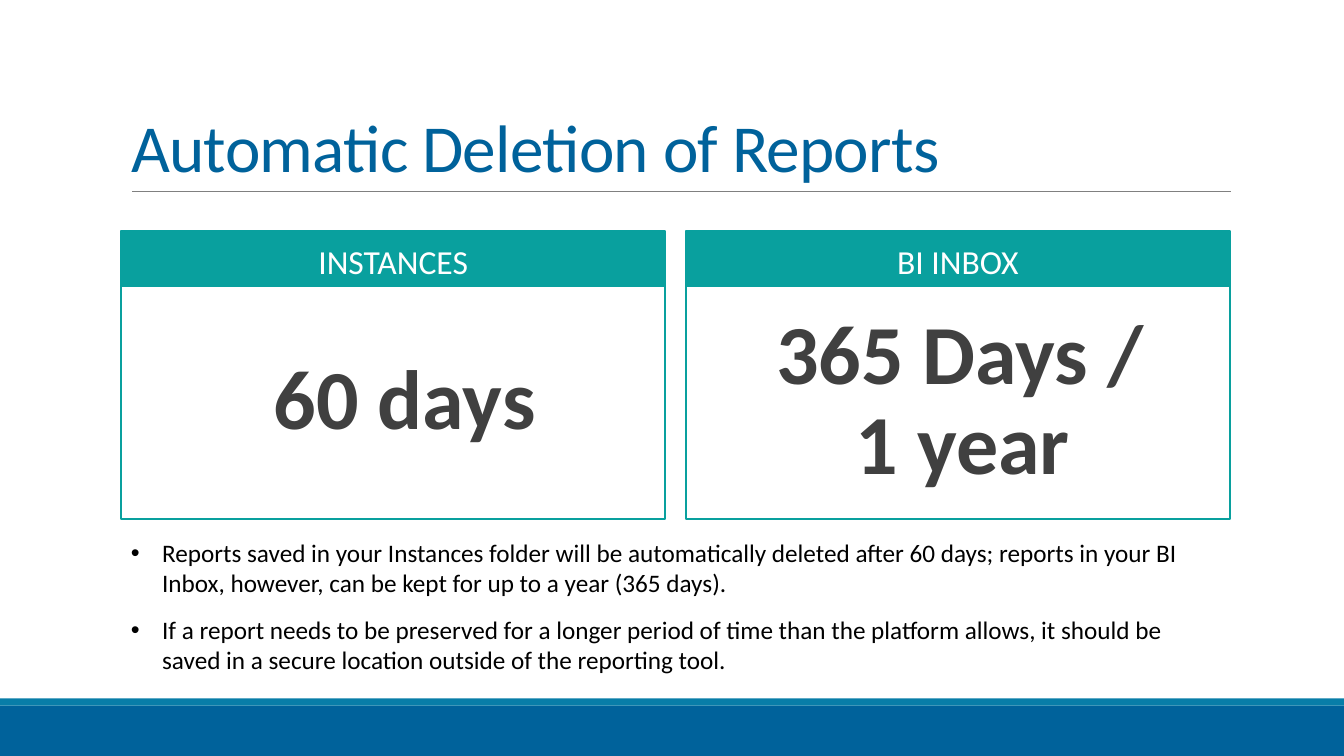
from lxml.etree import SubElement
from pptx import Presentation
from pptx.dml.color import RGBColor
from pptx.enum.shapes import MSO_CONNECTOR, MSO_SHAPE
from pptx.enum.text import MSO_ANCHOR, MSO_AUTO_SIZE, PP_ALIGN
from pptx.oxml.ns import qn
from pptx.util import Inches, Pt

BLUE = RGBColor(0x00, 0x62, 0x9B)
LIGHT_BLUE = RGBColor(0x08, 0x7D, 0xA8)
TEAL = RGBColor(0x09, 0xA0, 0x9E)
GRAY = RGBColor(0x80, 0x80, 0x80)
DARK_GRAY = RGBColor(0x40, 0x40, 0x40)
BLACK = RGBColor(0x00, 0x00, 0x00)
WHITE = RGBColor(0xFF, 0xFF, 0xFF)

LEFT, CONTENT_WIDTH = 1.2, 11
CARD_WIDTH, CARD_GAP = 5.4, 0.2
HEADER_TOP, HEADER_HEIGHT = 2.29, 0.55
CARD_TOP, CARD_HEIGHT = 2.83, 2.32

CARDS = [
    ("INSTANCES", ["60 days"]),
    ("BI INBOX", ["365 Days / ", "1 year"]),
]
NOTES = [
    "Reports saved in your Instances folder will be automatically deleted after 60 days; "
    "reports in your BI Inbox, however, can be kept for up to a year (365 days).",
    "If a report needs to be preserved for a longer period of time than the platform allows, "
    "it should be saved in a secure location outside of the reporting tool.",
]


class SlideBuilder:
    font_name = "Calibri"

    def __init__(self, slide):
        self.slide = slide

    def place(self, shape, left, top, width, height):
        shape.left, shape.top = Inches(left), Inches(top)
        shape.width, shape.height = Inches(width), Inches(height)

    def add_run(self, paragraph, text, size, color, bold=False):
        run = paragraph.add_run()
        run.text = text
        run.font.name = self.font_name
        run.font.size = Pt(size)
        run.font.bold = bold
        run.font.color.rgb = color
        return run

    def set_bullet(self, paragraph, character, indent):
        properties = paragraph._p.get_or_add_pPr()
        properties.set("marL", str(Inches(indent)))
        properties.set("indent", str(-Inches(indent)))
        SubElement(properties, qn("a:buFont")).set("typeface", "Arial")
        SubElement(properties, qn("a:buChar")).set("char", character)

    def set_frame(self, shape, anchor):
        frame = shape.text_frame
        frame.word_wrap = True
        frame.auto_size = MSO_AUTO_SIZE.NONE
        frame.vertical_anchor = anchor
        return frame

    def first_paragraph(self, frame, alignment, line_spacing):
        paragraph = frame.paragraphs[0]
        paragraph.alignment = alignment
        paragraph.line_spacing = line_spacing
        paragraph.space_before = Pt(0)
        return paragraph

    def rectangle(self, left, top, width, height, fill, line=None):
        shape = self.slide.shapes.add_shape(
            MSO_SHAPE.RECTANGLE, Inches(left), Inches(top), Inches(width), Inches(height))
        shape.shadow.inherit = False
        shape.fill.solid()
        shape.fill.fore_color.rgb = fill
        if line is None:
            shape.line.fill.background()
        else:
            shape.line.color.rgb = line
            shape.line.width = Pt(1.5)
        return shape

    def rule(self, left, right, top):
        connector = self.slide.shapes.add_connector(
            MSO_CONNECTOR.STRAIGHT, Inches(left), Inches(top), Inches(right), Inches(top))
        connector.line.color.rgb = GRAY
        connector.line.width = Pt(0.5)
        SubElement(connector._element.spPr, qn("a:effectLst"))

    def title(self, text):
        shape = self.slide.shapes.title
        self.place(shape, LEFT, 0.31, CONTENT_WIDTH, 1.59)
        frame = self.set_frame(shape, MSO_ANCHOR.BOTTOM)
        paragraph = self.first_paragraph(frame, PP_ALIGN.LEFT, 0.85)
        run = self.add_run(paragraph, text, 48, BLUE)
        run.font._element.set("spc", "-50")

    def card_header(self, left, text):
        shape = self.rectangle(left, HEADER_TOP, CARD_WIDTH, HEADER_HEIGHT, TEAL, TEAL)
        frame = self.set_frame(shape, MSO_ANCHOR.BOTTOM)
        paragraph = self.first_paragraph(frame, PP_ALIGN.CENTER, 0.9)
        self.add_run(paragraph, text, 24, WHITE)

    def card_body(self, placeholder, left, lines):
        self.place(placeholder, left, CARD_TOP, CARD_WIDTH, CARD_HEIGHT)
        placeholder.line.color.rgb = TEAL
        placeholder.line.width = Pt(1.5)
        frame = self.set_frame(placeholder, MSO_ANCHOR.MIDDLE)
        frame.margin_left = frame.margin_right = Inches(0)
        paragraph = self.first_paragraph(frame, PP_ALIGN.CENTER, 0.9)
        self.set_bullet(paragraph, " ", 0.1)
        for index, line in enumerate(lines):
            if index:
                paragraph.add_line_break()
            self.add_run(paragraph, line, 60, DARK_GRAY, bold=True)

    def bullet_list(self, left, top, width, height, items):
        shape = self.slide.shapes.add_textbox(
            Inches(left), Inches(top), Inches(width), Inches(height))
        frame = self.set_frame(shape, MSO_ANCHOR.TOP)
        for index, item in enumerate(items):
            paragraph = frame.add_paragraph() if index else frame.paragraphs[0]
            paragraph.space_before = Pt(12 if index else 0)
            self.set_bullet(paragraph, "•", 0.31)
            self.add_run(paragraph, item, 18, BLACK)


def main():
    presentation = Presentation()
    presentation.slide_width = Inches(13.33)
    presentation.slide_height = Inches(7.5)
    slide = presentation.slides.add_slide(presentation.slide_layouts.get_by_name("Two Content"))
    builder = SlideBuilder(slide)

    builder.rectangle(0, 7, 13.33, 0.5, BLUE)
    builder.rectangle(0, 6.93, 13.33, 0.07, LIGHT_BLUE)
    builder.rule(1.31, 12.21, 1.9)
    builder.title("Automatic Deletion of Reports")
    for index, (header, lines) in enumerate(CARDS):
        left = LEFT + index * (CARD_WIDTH + CARD_GAP)
        builder.card_body(slide.placeholders[index + 1], left, lines)
        builder.card_header(left, header)
    builder.bullet_list(LEFT, 5.28, CONTENT_WIDTH, 1.59, NOTES)

    presentation.save("out.pptx")


if __name__ == "__main__":
    main()
